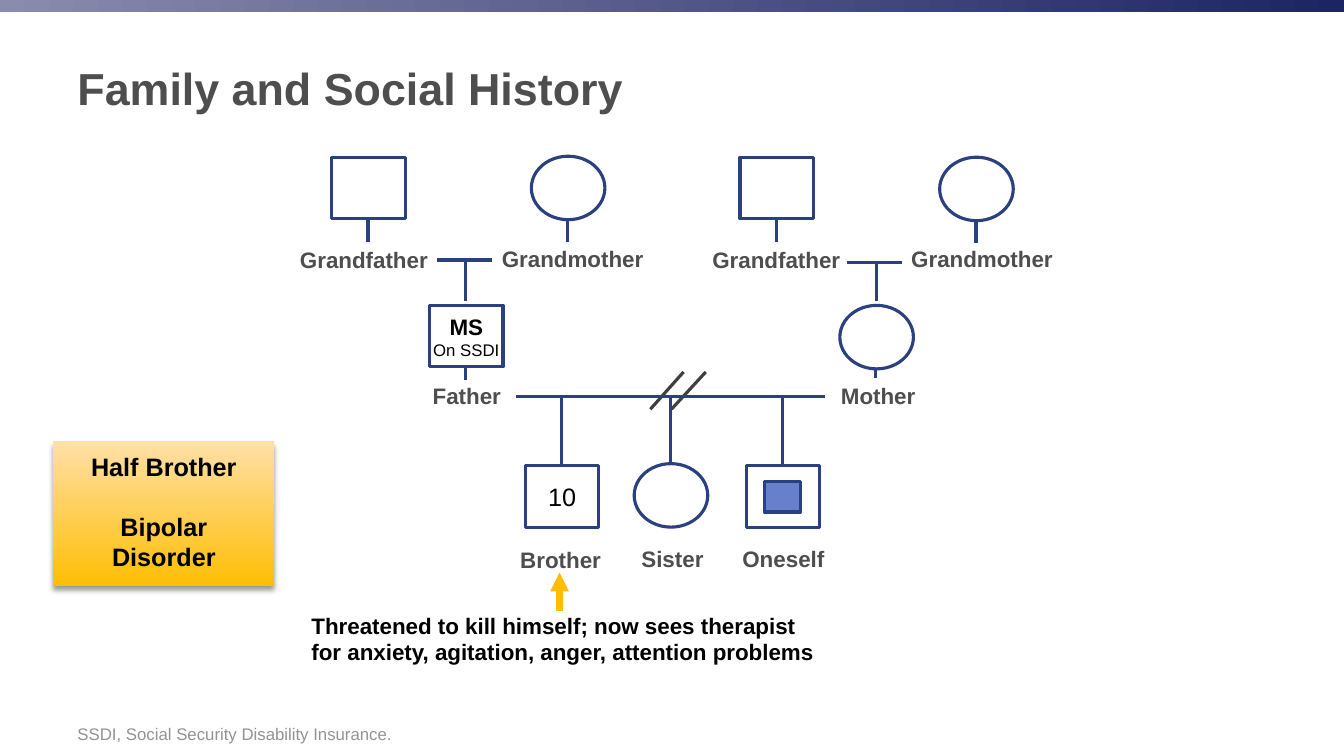
"""Build a family tree slide with social history notes."""
import lxml.etree
import pptx
import pptx.dml.color
import pptx.enum.shapes
import pptx.enum.text
import pptx.oxml.ns
import pptx.util

RGB = pptx.dml.color.RGBColor
SHAPE = pptx.enum.shapes.MSO_SHAPE
ANCHOR = pptx.enum.text.MSO_ANCHOR
ALIGN = pptx.enum.text.PP_ALIGN

PX = 9144
FONT = "Arial"
NAVY = RGB(0x2B, 0x40, 0x7E)
BLUE = RGB(0x66, 0x80, 0xCB)
GOLD = RGB(0xFF, 0xBE, 0x05)
PALE_GOLD = RGB(0xFF, 0xE0, 0xA7)
BAND_LEFT = RGB(0x89, 0x8C, 0xAD)
BAND_RIGHT = RGB(0x1C, 0x24, 0x63)
GRAY = RGB(0x4D, 0x4E, 0x4D)
FOOTNOTE_GRAY = RGB(0x93, 0x93, 0x93)
SLASH_GRAY = RGB(0x3F, 0x3F, 0x3F)
BLACK = RGB(0, 0, 0)

TITLE = "Family and Social History"
FOOTNOTE = "SSDI, Social Security Disability Insurance."
BROTHER_NOTE = ("Threatened to kill himself; now sees therapist "
                "for anxiety, agitation, anger, attention problems")
HALF_BROTHER = [("Half Brother", 18, True), ("Bipolar Disorder", 18, True)]
MALE, FEMALE = (SHAPE.RECTANGLE, 73, 61), (SHAPE.OVAL, 73, 63)

# name, symbol, centre x, top, label centre x, label top, label width, inner text
MEMBERS = [
    ("Grandfather", MALE, 365, 156, 361, 237, 200, []),
    ("Grandmother", FEMALE, 563, 155, 568, 236, 200, []),
    ("Grandfather", MALE, 770, 156, 770, 237, 200, []),
    ("Grandmother", FEMALE, 968, 156, 974, 236, 200, []),
    ("Father", MALE, 462, 303, 463, 372, 112,
     [("MS", 16, True), ("On SSDI", 12, False)]),
    ("Mother", FEMALE, 869, 303, 871, 372, 112, []),
    ("Brother", MALE, 557, 462, 556, 535, 112, [("10", 18, False)]),
    ("Sister", FEMALE, 665, 460, 667, 534, 112, []),
    ("Oneself", MALE, 776, 462, 777, 534, 112, []),
]
STEMS = [(365, 218, 240), (563, 218, 240), (770, 218, 240), (968, 218, 241),
         (462, 365, 377), (868, 366, 375), (462, 258, 299), (869, 260, 299),
         (557, 393, 460), (665, 393, 460), (776, 393, 460)]
COUPLES = [(433, 488, 258), (840, 895, 260), (512, 818, 393)]
DIVORCE_SLASHES = [(678, 369, 645, 406), (700, 369, 666, 406)]


def add_xml(parent, tag, **attributes):
    """Append a drawing element to a parent."""
    return lxml.etree.SubElement(parent, pptx.oxml.ns.qn(tag), **attributes)


def write(shape, lines, color, align=ALIGN.LEFT, anchor=ANCHOR.TOP,
          margins=(10, 5), gap=0):
    """Fill a shape with (text, size, bold) lines; gap separates them in points."""
    frame = shape.text_frame
    frame.word_wrap = True
    frame.vertical_anchor = anchor
    frame.margin_left = frame.margin_right = margins[0] * PX
    frame.margin_top = frame.margin_bottom = margins[1] * PX
    for index, (text, size, bold) in enumerate(lines):
        paragraph = frame.add_paragraph() if index else frame.paragraphs[0]
        paragraph.text = text
        paragraph.alignment = align
        paragraph.space_before = pptx.util.Pt(gap if index else 0)
        font = paragraph.font
        font.name, font.size, font.bold = FONT, pptx.util.Pt(size), bold
        font.color.rgb = color


def add_text(slide, box, text, size, bold, color, **options):
    """Add a wrapping text box."""
    shape = slide.shapes.add_textbox(*(value * PX for value in box))
    write(shape, [(text, size, bold)], color, **options)


def add_figure(slide, kind, box, fill=None, outline=None):
    """Add a preset shape without shadow."""
    shape = slide.shapes.add_shape(kind, *(value * PX for value in box))
    shape.shadow.inherit = False
    if fill:
        shape.fill.solid()
        shape.fill.fore_color.rgb = fill
    else:
        shape.fill.background()
    if outline:
        shape.line.color.rgb = outline
        shape.line.width = pptx.util.Pt(2.25)
    else:
        shape.line.fill.background()
    return shape


def add_gradient(shape, colors, angle):
    """Give a shape a two-colour linear gradient."""
    shape.fill.gradient()
    shape.fill.gradient_angle = angle
    for stop, color in zip(shape.fill.gradient_stops, colors):
        stop.color.rgb = color


def add_line(slide, ends, color=NAVY, width=2.25):
    """Add a straight connector without shadow."""
    line = slide.shapes.add_connector(
        pptx.enum.shapes.MSO_CONNECTOR.STRAIGHT, *(value * PX for value in ends))
    line.line.color.rgb = color
    line.line.width = pptx.util.Pt(width)
    add_xml(line._element.spPr, "a:effectLst")
    return line


def add_half_brother(slide):
    """Add the shaded card about the half brother."""
    card = add_figure(slide, SHAPE.RECTANGLE, (53, 438, 219, 143))
    add_gradient(card, (PALE_GOLD, GOLD), 270)
    write(card, HALF_BROTHER, BLACK, ALIGN.CENTER, margins=(32, 10), gap=21)
    effects = card._element.spPr.find(pptx.oxml.ns.qn("a:effectLst"))
    shadow = add_xml(effects, "a:outerShdw", blurRad="50800", dist="38100",
                     dir="5400000", rotWithShape="0")
    shade = add_xml(shadow, "a:srgbClr", val="000000")
    add_xml(shade, "a:alpha", val="40000")


def add_tree(slide):
    """Add the relationship lines, then the members and their labels."""
    for ends in DIVORCE_SLASHES:
        add_line(slide, ends, SLASH_GRAY)
    for x, top, bottom in STEMS:
        add_line(slide, (x, top, x, bottom))
    for left, right, y in COUPLES:
        add_line(slide, (left, y, right, y))
    for name, symbol, x, top, label_x, label_top, label_width, inner in MEMBERS:
        kind, width, height = symbol
        figure = add_figure(slide, kind, (x - width // 2, top, width, height),
                            outline=NAVY)
        write(figure, inner, BLACK, ALIGN.CENTER, ANCHOR.MIDDLE, (0, 0))
        add_text(slide, (label_x - label_width // 2, label_top, label_width, 41),
                 name, 16, True, GRAY, align=ALIGN.CENTER, anchor=ANCHOR.MIDDLE)
    add_figure(slide, SHAPE.RECTANGLE, (758, 478, 36, 30), BLUE, NAVY)


def main():
    """Compose and save the slide."""
    presentation = pptx.Presentation()
    presentation.slide_width = 1333 * PX
    presentation.slide_height = 750 * PX
    slide = presentation.slides.add_slide(presentation.slide_layouts[6])
    band = add_figure(slide, SHAPE.RECTANGLE, (0, 0, 1333, 12))
    add_gradient(band, (BAND_LEFT, BAND_RIGHT), 0)
    add_text(slide, (67, 22, 1175, 130), TITLE, 32, True, GRAY,
             anchor=ANCHOR.MIDDLE)
    add_half_brother(slide)
    add_tree(slide)
    add_text(slide, (299, 602, 532, 64), BROTHER_NOTE, 16, True, BLACK)
    arrow = add_line(slide, (555, 606, 555, 568), GOLD, 4.5)
    outline = arrow._element.spPr.find(pptx.oxml.ns.qn("a:ln"))
    add_xml(outline, "a:tailEnd", type="triangle")
    add_text(slide, (67, 695, 1175, 48), FOOTNOTE, 12, False, FOOTNOTE_GRAY,
             anchor=ANCHOR.BOTTOM)
    presentation.save("out.pptx")


if __name__ == "__main__":
    main()
